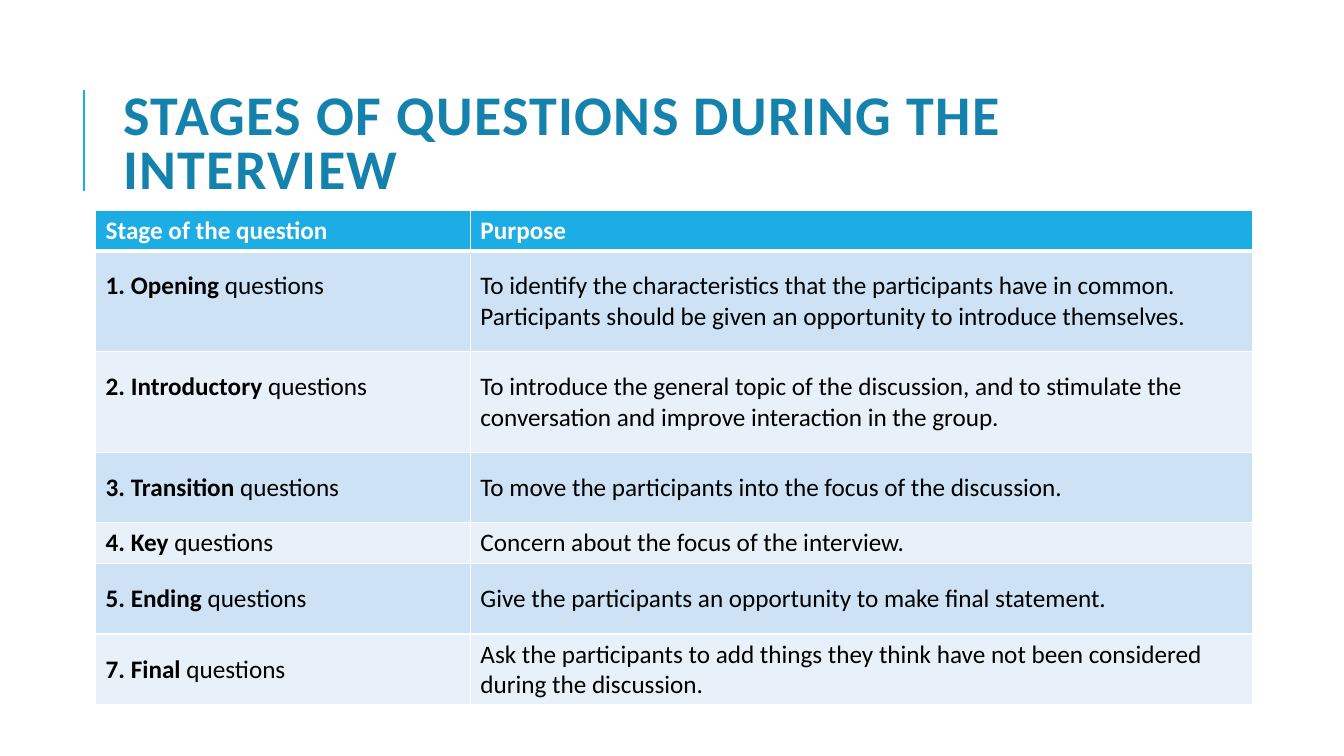
from lxml import etree
from pptx import Presentation
from pptx.dml.color import RGBColor
from pptx.enum.shapes import MSO_CONNECTOR
from pptx.enum.text import MSO_ANCHOR
from pptx.oxml import parse_xml
from pptx.oxml.ns import nsdecls, qn
from pptx.util import Emu, Pt

STRAIGHT = MSO_CONNECTOR.STRAIGHT
MIDDLE, TOP = MSO_ANCHOR.MIDDLE, MSO_ANCHOR.TOP
PX = 9525
FONT = "Calibri"
COLORS = {
    "accent": "1CADE4",
    "title": "1482AC",
    "white": "FFFFFF",
    "black": "000000",
    "band_dark": "CDE3F5",
    "band_light": "E8F1FA",
}
TITLE = "STAGES OF QUESTIONS DURING THE INTERVIEW"
HEADERS = ("Stage of the question", "Purpose")
COL_WIDTHS = (357, 745)
HEADER_HEIGHT = 39
LINE_HEIGHT = 29
CELL_MARGIN = 5
STAGES = (
    ("1. Opening ", "To identify the characteristics that the participants have in common. "
     "Participants should be given an opportunity to introduce themselves.", 96, LINE_HEIGHT),
    ("2. Introductory ", "To introduce the general topic of the discussion, and to stimulate the "
     "conversation and improve interaction in the group.", 96, LINE_HEIGHT),
    ("3. Transition ", "To move the participants into the focus of the discussion.", 67, 0),
    ("4. Key ", "Concern about the focus of the interview.", 39, 0),
    ("5. Ending ", "Give the participants an opportunity to make final statement.", 67, 0),
    ("7. Final ", "Ask the participants to add things they think have not been considered "
     "during the discussion.", 67, 0),
)


def px(n):
    """Convert pixels to EMU."""
    return Emu(n * PX)


def rgb(name):
    """Look up a colour by name."""
    return RGBColor.from_string(COLORS[name])


def add_run(p, text, color, size=18, bold=False):
    """Append a formatted run to a paragraph."""
    r = p.add_run()
    r.text = text
    for attr, value in {"name": FONT, "size": Pt(size), "bold": bold}.items():
        setattr(r.font, attr, value)
    r.font.color.rgb = rgb(color)
    return r


def add_rule(s, x, top, bottom):
    """Draw the vertical accent line beside the title."""
    cx = s.shapes.add_connector(STRAIGHT, px(x), px(bottom), px(x), px(top))
    cx.line.color.rgb = rgb("accent")
    cx.line.width = Pt(1.5)
    etree.SubElement(cx._element.spPr, qn("a:effectLst"))


def add_title(s, text, box):
    """Add the letter-spaced heading."""
    tf = s.shapes.add_textbox(*map(px, box)).text_frame
    tf.word_wrap = True
    tf.vertical_anchor = MIDDLE
    p = tf.paragraphs[0]
    p.line_spacing = 0.8
    r = add_run(p, text, "title", 40, True)
    r.font._element.set("spc", "100")


def set_borders(cell, top=1, bottom=1):
    """Give a cell white borders of the given point widths."""
    tc_pr = cell._tc.get_or_add_tcPr()
    widths = {"lnL": 1, "lnR": 1, "lnT": top, "lnB": bottom}
    for i, (tag, width) in enumerate(widths.items()):
        tc_pr.insert(i, parse_xml(
            f'<a:{tag} {nsdecls("a")} w="{Pt(width)}"><a:solidFill>'
            f'<a:srgbClr val="{COLORS["white"]}"/></a:solidFill></a:{tag}>'))


def fill_cell(cell, runs, fill, color, anchor=MIDDLE, extra=0, **borders):
    """Write (text, bold) runs into a cell and style it."""
    cell.fill.solid()
    cell.fill.fore_color.rgb = rgb(fill)
    cell.vertical_anchor = anchor
    cell.margin_bottom = px(CELL_MARGIN + extra)
    for text, bold in runs:
        add_run(cell.text_frame.paragraphs[0], text, color, bold=bold)
    set_borders(cell, **borders)


def add_stage_table(s, left, top):
    """Add the table of question stages and their purposes."""
    heights = [HEADER_HEIGHT] + [stage[2] for stage in STAGES]
    table = s.shapes.add_table(len(heights), len(COL_WIDTHS), px(left), px(top),
                               px(sum(COL_WIDTHS)), px(sum(heights))).table
    for col, width in zip(table.columns, COL_WIDTHS):
        col.width = px(width)
    for row, height in zip(table.rows, heights):
        row.height = px(height)
    for c, text in enumerate(HEADERS):
        fill_cell(table.cell(0, c), [(text, True)], "accent", "white", TOP, bottom=3)
    for i, (stage, purpose, _, extra) in enumerate(STAGES, 1):
        fill = "band_dark" if i % 2 else "band_light"
        edge = 3 if i == 1 else 1
        fill_cell(table.cell(i, 0), [(stage, True), ("questions", False)],
                  fill, "black", extra=extra, top=edge)
        fill_cell(table.cell(i, 1), [(purpose, False)], fill, "black", top=edge)


def main():
    """Build the slide and save it."""
    prs = Presentation()
    prs.slide_width, prs.slide_height = px(1280), px(720)
    s = prs.slides.add_slide(prs.slide_layouts[6])
    add_rule(s, 80, 86, 182)
    add_title(s, TITLE, (108, 61, 1020, 157))
    add_stage_table(s, 91, 200)
    prs.save("out.pptx")


if __name__ == "__main__":
    main()
